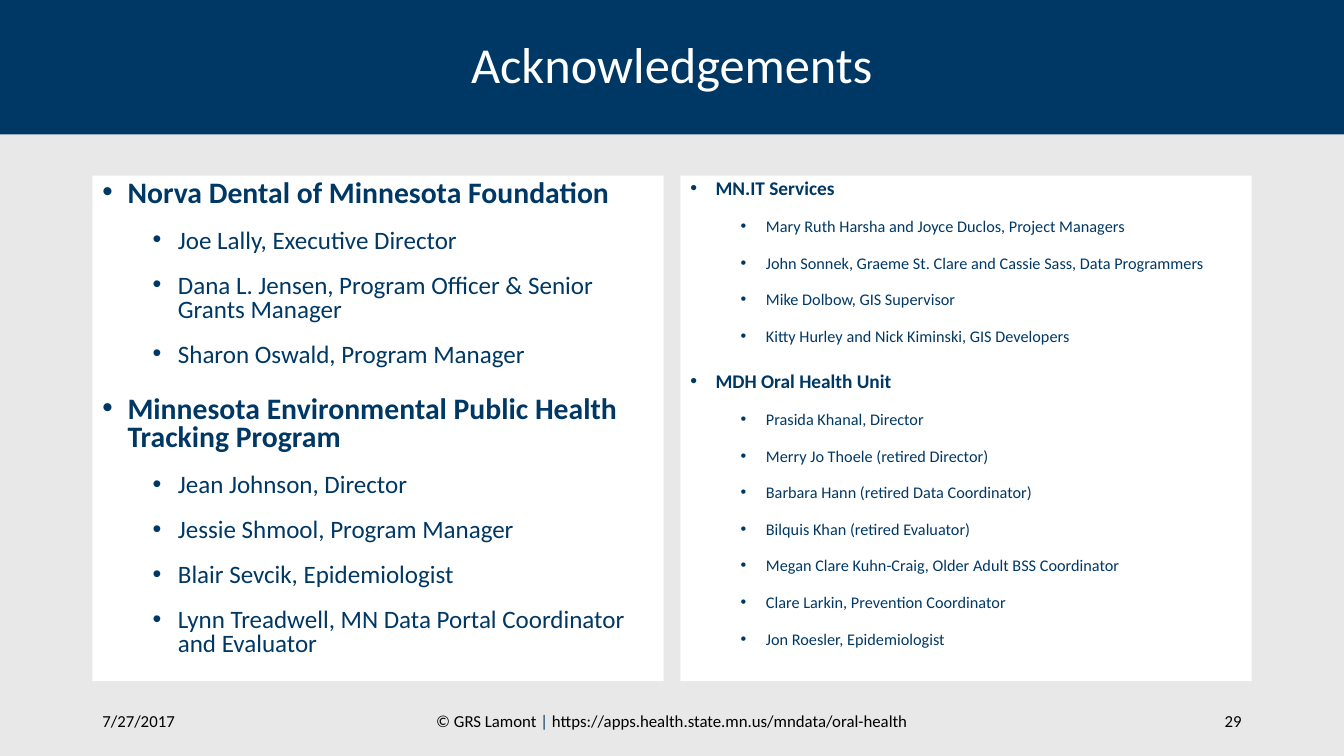
from lxml.etree import SubElement
from pptx import Presentation
from pptx.dml.color import RGBColor
from pptx.enum.shapes import MSO_SHAPE as Shape
from pptx.enum.text import MSO_ANCHOR as Anchor, MSO_AUTO_SIZE as AutoSize, PP_ALIGN as Align
from pptx.oxml.ns import qn
from pptx.util import Pt

COLORS = {"navy": "003865", "white": "FFFFFF", "black": "000000", "page": "E8E8E8"}
MARGIN, PANEL_WIDTH, PANEL_GAP = 66, 408, 12

# Each panel: heading size, name size, groups of people
PANELS = [
    (21.2, 17.9, [
        ("Norva Dental of Minnesota Foundation", [
            "Joe Lally, Executive Director",
            "Dana L. Jensen, Program Officer & Senior Grants Manager",
            "Sharon Oswald, Program Manager",
        ]),
        ("Minnesota Environmental Public Health Tracking Program", [
            "Jean Johnson, Director",
            "Jessie Shmool, Program Manager",
            "Blair Sevcik, Epidemiologist",
            "Lynn Treadwell, MN Data Portal Coordinator and Evaluator",
        ]),
    ]),
    (13.8, 11.6, [
        ("MN.IT Services", [
            "Mary Ruth Harsha and Joyce Duclos, Project Managers",
            "John Sonnek, Graeme St. Clare and Cassie Sass, Data Programmers",
            "Mike Dolbow, GIS Supervisor",
            "Kitty Hurley and Nick Kiminski, GIS Developers",
        ]),
        ("MDH Oral Health Unit", [
            "Prasida Khanal, Director",
            "Merry Jo Thoele (retired Director)",
            "Barbara Hann (retired Data Coordinator)",
            "Bilquis Khan (retired Evaluator)",
            "Megan Clare Kuhn-Craig, Older Adult BSS Coordinator",
            "Clare Larkin, Prevention Coordinator",
            "Jon Roesler, Epidemiologist",
        ]),
    ]),
]

# Each footer part: left, width, alignment, runs
FOOTER = [
    (66, 107, Align.LEFT, [("7/27/2017", "black")]),
    (260, 440, Align.CENTER, [
        ("© GRS Lamont ", "black"),
        ("|", "navy"),
        (" https://apps.health.state.mn.us/mndata/oral-health", "black"),
    ]),
    (779, 115, Align.RIGHT, [("29", "black")]),
]


def add_run(paragraph, text, size, color, bold=False):
    run = paragraph.add_run()
    run.text = text
    run.font.name = "Calibri"
    run.font.size = Pt(size)
    run.font.bold = bold
    run.font.color.rgb = RGBColor.from_string(COLORS[color])


def add_block(left, top, width, height, color):
    block = slide.shapes.add_shape(Shape.RECTANGLE, Pt(left), Pt(top), Pt(width), Pt(height))
    block.shadow.inherit = False
    block.fill.solid()
    block.fill.fore_color.rgb = RGBColor.from_string(COLORS[color])
    block.line.fill.background()
    return block


prs = Presentation()
prs.slide_width, prs.slide_height = Pt(960), Pt(540)
slide = prs.slides.add_slide(prs.slide_layouts[5])
slide.background.fill.solid()
slide.background.fill.fore_color.rgb = RGBColor.from_string(COLORS["page"])

# Title on its band
title = slide.shapes.title
band = add_block(0, 0, 960, 96, "navy")
title.element.addprevious(band.element)
title.left, title.top, title.width, title.height = Pt(MARGIN), Pt(12), Pt(828), Pt(72)
title.text_frame.auto_size = AutoSize.NONE
title.text_frame.vertical_anchor = Anchor.MIDDLE
heading = title.text_frame.paragraphs[0]
heading.alignment = Align.CENTER
heading.line_spacing = 0.9
add_run(heading, "Acknowledgements", 36, "white")

# Two panels of names
for column, (group_size, name_size, groups) in enumerate(PANELS):
    left = MARGIN + column * (PANEL_WIDTH + PANEL_GAP)
    names = add_block(left, 125.5, PANEL_WIDTH, 361, "white").text_frame
    names.word_wrap = True
    names.vertical_anchor = Anchor.TOP
    entries = [(level, text) for group, people in groups
               for level, text in [(0, group)] + [(1, person) for person in people]]
    for index, (level, text) in enumerate(entries):
        entry = names.add_paragraph() if index else names.paragraphs[0]
        entry.level = level
        entry.alignment = Align.LEFT
        entry.line_spacing = 0.8
        entry.space_before = Pt(5 if level else 10)
        entry.space_after = Pt(10)
        add_run(entry, text, name_size if level else group_size, "navy", bold=level == 0)

        # Hanging bullet
        props = entry._p.get_or_add_pPr()
        props.set("marL", str(Pt(54 if level else 18)))
        props.set("indent", str(Pt(-18)))
        bullet_color = SubElement(props, qn("a:buClr"))
        SubElement(bullet_color, qn("a:srgbClr"), val=COLORS["navy"])
        SubElement(props, qn("a:buFont"), typeface="Arial")
        SubElement(props, qn("a:buChar"), char="•")

# Footer
for left, width, alignment, runs in FOOTER:
    footer = slide.shapes.add_textbox(Pt(left), Pt(500.5), Pt(width), Pt(28.8)).text_frame
    footer.word_wrap = True
    footer.vertical_anchor = Anchor.MIDDLE
    line = footer.paragraphs[0]
    line.alignment = alignment
    for text, color in runs:
        add_run(line, text, 12, color)

prs.save("out.pptx")
